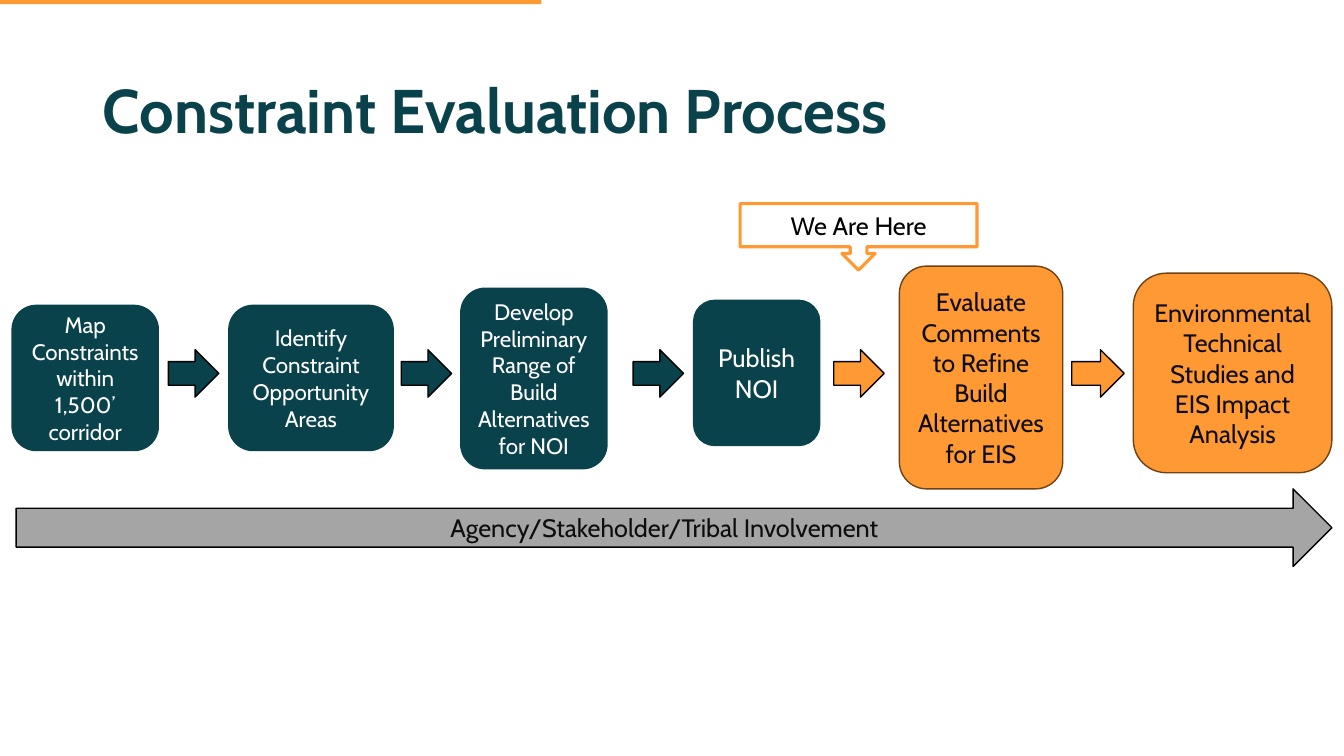
import dataclasses

import pptx
import pptx.dml.color
import pptx.enum.shapes
import pptx.enum.text
import pptx.util

PX = 9144
KINDS = pptx.enum.shapes.MSO_SHAPE
ALIGN = pptx.enum.text.PP_ALIGN
MIDDLE = pptx.enum.text.MSO_ANCHOR.MIDDLE


@dataclasses.dataclass(frozen=True)
class Theme:
    """Colours, font and type sizes of the slide."""

    teal: str = "0A424C"
    orange: str = "FF9933"
    brown: str = "704316"
    grey: str = "A5A5A5"
    white: str = "FFFFFF"
    black: str = "000000"
    ink: str = "0D0D0D"
    font: str = "Cabin"
    title_size: int = 44
    body_size: int = 18
    small_size: int = 16


THEME = Theme()

DONE = {"fill": THEME.teal, "line": THEME.teal, "color": THEME.white}
NEXT = {"fill": THEME.orange, "line": THEME.brown, "color": THEME.ink}

STEPS = [
    ("Map Constraints within 1,500’ corridor", (12, 303, 145, 144), DONE, THEME.small_size),
    ("Identify Constraint Opportunity Areas", (227, 303, 163, 144), DONE, THEME.small_size),
    ("Develop Preliminary Range of Build Alternatives for NOI",
     (457, 286, 145, 179), DONE, THEME.small_size),
    ("Publish NOI", (688, 298, 125, 144), DONE, THEME.body_size),
    ("Evaluate Comments to Refine Build Alternatives for EIS",
     (892, 264, 162, 221), NEXT, THEME.body_size),
    ("Environmental Technical Studies and EIS Impact Analysis",
     (1124, 271, 197, 198), NEXT, THEME.body_size),
]

STEP_ARROWS = [
    (167, 50, THEME.teal),
    (398, 50, THEME.teal),
    (628, 50, THEME.teal),
    (827, 50, THEME.orange),
    (1063, 52, THEME.orange),
]


def emu(box):
    """Turn px lengths into EMU."""
    return [pptx.util.Emu(length * PX) for length in box]


def set_format(target, values):
    """Set each named attribute of the target."""
    for name, value in values.items():
        setattr(target, name, value)


def write(shape, text, size, color, bold=False, align=ALIGN.CENTER, spacing=1.0):
    """Write one vertically centred paragraph into a shape."""
    frame = shape.text_frame
    set_format(frame, {"word_wrap": True, "vertical_anchor": MIDDLE})
    paragraph = frame.paragraphs[0]
    set_format(paragraph, {"alignment": align, "line_spacing": spacing})
    run = paragraph.add_run()
    run.text = text
    set_format(run.font, {"name": THEME.font, "size": pptx.util.Pt(size), "bold": bold})
    run.font.color.rgb = pptx.dml.color.RGBColor.from_string(color)


def add_figure(slide, kind, box, fill, line=None, width=1):
    """Add a flat preset shape, outlined when a line colour is given."""
    shape = slide.shapes.add_shape(kind, *emu(box))
    shape.shadow.inherit = False
    shape.fill.solid()
    shape.fill.fore_color.rgb = pptx.dml.color.RGBColor.from_string(fill)
    if line is None:
        shape.line.fill.background()
    else:
        shape.line.color.rgb = pptx.dml.color.RGBColor.from_string(line)
        shape.line.width = pptx.util.Pt(width)
    return shape


def add_title(slide, text):
    """Add the slide title."""
    title = slide.shapes.add_textbox(*emu((92, 40, 900, 145)))
    write(title, text, THEME.title_size, THEME.teal, True, ALIGN.LEFT, 0.9)


def add_step(slide, text, box, style, size):
    """Add one rounded step of the process."""
    step = add_figure(slide, KINDS.ROUNDED_RECTANGLE, box, style["fill"], style["line"])
    write(step, text, size, style["color"])


def add_step_arrow(slide, left, width, fill):
    """Add an arrow between two steps."""
    add_figure(slide, KINDS.RIGHT_ARROW, (left, 347, width, 47), fill, THEME.black)


def add_involvement_arrow(slide, text):
    """Add the long arrow under the steps."""
    arrow = add_figure(slide, KINDS.RIGHT_ARROW, (16, 485, 1305, 77), THEME.grey, THEME.black)
    write(arrow, text, THEME.body_size, THEME.ink)


def add_marker(slide, text):
    """Add the callout that marks the current stage."""
    marker = add_figure(slide, KINDS.DOWN_ARROW_CALLOUT, (734, 202, 235, 66),
                        THEME.white, THEME.orange, 2.25)
    write(marker, text, THEME.body_size, THEME.black)


def main():
    """Build and save the slide."""
    presentation = pptx.Presentation()
    width, height = emu((1333, 750))
    set_format(presentation, {"slide_width": width, "slide_height": height})
    slide = presentation.slides.add_slide(presentation.slide_layouts[6])
    add_figure(slide, KINDS.RECTANGLE, (0, -1, 537, 5), THEME.orange)
    add_title(slide, "Constraint Evaluation Process")
    for step in STEPS:
        add_step(slide, *step)
    for arrow in STEP_ARROWS:
        add_step_arrow(slide, *arrow)
    add_involvement_arrow(slide, "Agency/Stakeholder/Tribal Involvement")
    add_marker(slide, "We Are Here")
    presentation.save("out.pptx")


if __name__ == "__main__":
    main()
